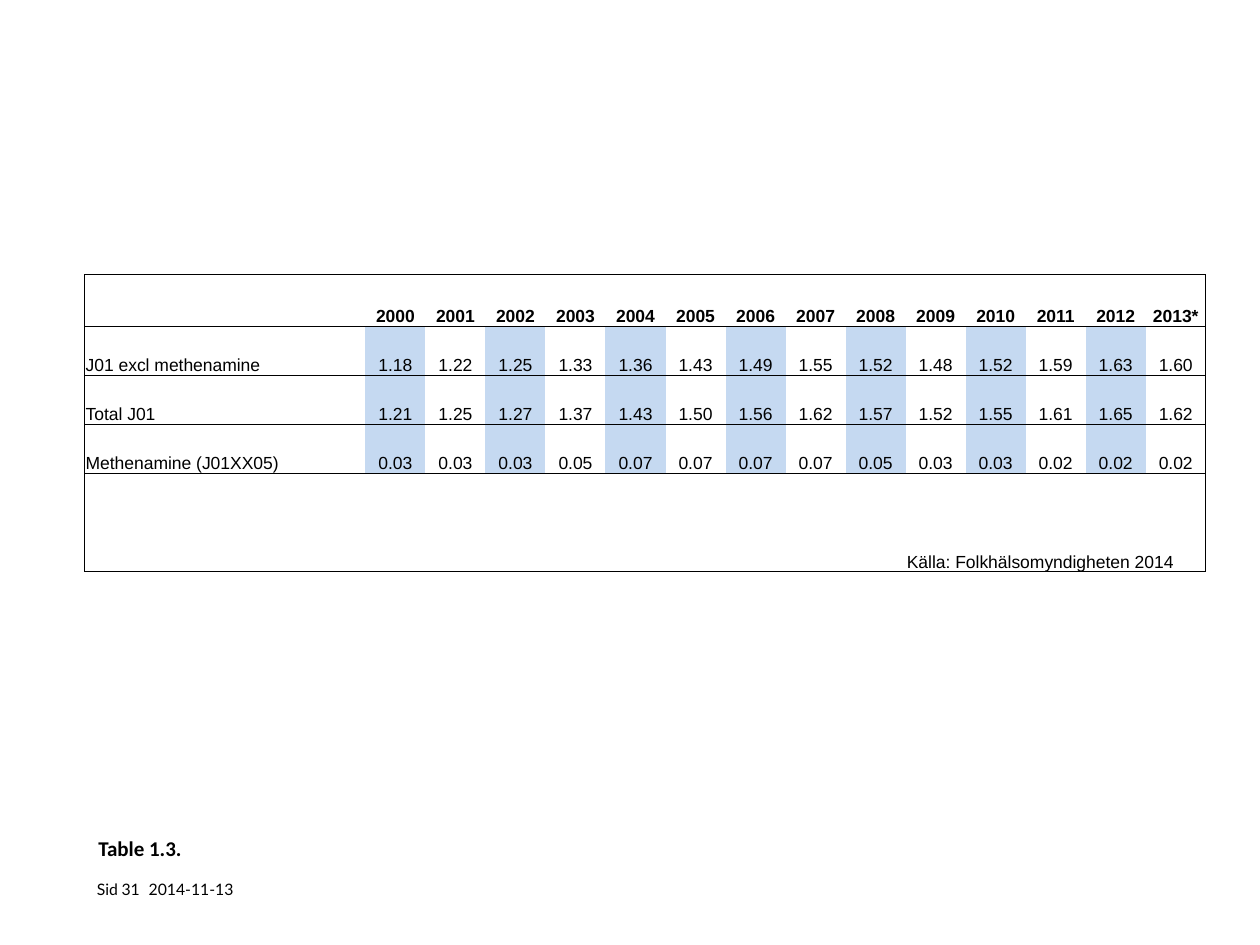
from lxml import etree
from pptx import Presentation
from pptx.dml.color import RGBColor
from pptx.enum import text
from pptx.oxml import ns
from pptx.util import Inches, Pt

INK = {"text": "000000", "line": "000000", "band": "C5D9F1"}
NO_GRID = "{2D5ABB26-0587-4C30-8999-92F81FD0307C}"

YEARS = [str(year) for year in range(2000, 2013)] + ["2013*"]
DATA = {
    "J01 excl methenamine":
        "1.18 1.22 1.25 1.33 1.36 1.43 1.49 1.55 1.52 1.48 1.52 1.59 1.63 1.60",
    "Total J01":
        "1.21 1.25 1.27 1.37 1.43 1.50 1.56 1.62 1.57 1.52 1.55 1.61 1.65 1.62",
    "Methenamine (J01XX05)":
        "0.03 0.03 0.03 0.05 0.07 0.07 0.07 0.07 0.05 0.03 0.03 0.02 0.02 0.02",
}
SOURCE = "Källa: Folkhälsomyndigheten 2014"


def style(para, size, face, bold=False):
    for run in para.runs:
        run.font.size = Pt(size)
        run.font.name = face
        run.font.bold = bold
        run.font.color.rgb = RGBColor.from_string(INK["text"])


def flush(frame):
    frame.margin_left = frame.margin_right = 0
    frame.margin_top = frame.margin_bottom = 0
    frame.vertical_anchor = text.MSO_ANCHOR.BOTTOM


def border(cell, side, width):
    props = cell._tc.get_or_add_tcPr()
    line = etree.SubElement(props, ns.qn("a:ln" + side), w=str(Pt(width)))
    if width:
        fill = etree.SubElement(line, ns.qn("a:solidFill"))
        etree.SubElement(fill, ns.qn("a:srgbClr"), val=INK["line"])
    else:
        etree.SubElement(line, ns.qn("a:noFill"))


def put_title(slide, box):
    title = slide.shapes.title
    title.left, title.top, title.width, title.height = map(Inches, box)
    frame = title.text_frame
    frame.text = "Table 1.3."
    frame.word_wrap = True
    flush(frame)
    para = frame.paragraphs[0]
    para.alignment = text.PP_ALIGN.LEFT
    para.line_spacing = Pt(34)
    style(para, 12, "Calibri", True)


def put_table(slide, box):
    rows = [["", *YEARS]]
    rows += [[name, *row.split()] for name, row in DATA.items()]
    blank = [""] * len(rows[0])
    rows += [blank, blank[:10] + [SOURCE] + blank[11:]]
    last, end = len(rows) - 1, len(blank) - 1

    frame = slide.shapes.add_table(len(rows), len(blank), *map(Inches, box))
    table = frame.table
    table.first_row = table.horz_banding = False
    table._tbl.tblPr.find(ns.qn("a:tableStyleId")).text = NO_GRID

    # Wide label column, then equal year columns
    label = 2.23
    for c, col in enumerate(table.columns):
        col.width = Inches(label if c == 0 else (box[2] - label) / end)
    for r, row in enumerate(table.rows):
        row.height = Inches(0.41 if r == 0 else 0.39)

    # Rules above and below each row; none between the two foot rows
    rules = [0.5, 1] + [0.5] * (last - 2) + [0, 0.5]
    for r, row in enumerate(rows):
        for c, value in enumerate(row):
            cell = table.cell(r, c)
            cell.margin_left = cell.margin_right = cell.margin_top = Inches(0.01)
            cell.margin_bottom = 0
            cell.vertical_anchor = text.MSO_ANCHOR.BOTTOM
            border(cell, "L", 0.5 if c == 0 else 0)
            border(cell, "R", 0.5 if c == end or value == SOURCE else 0)
            border(cell, "T", rules[r])
            border(cell, "B", rules[r + 1])
            if 0 < r <= len(DATA) and c % 2:
                cell.fill.solid()
                cell.fill.fore_color.rgb = RGBColor.from_string(INK["band"])
            else:
                cell.fill.background()
            if value:
                cell.text_frame.text = value
                para = cell.text_frame.paragraphs[0]
                if c and value != SOURCE:
                    para.alignment = text.PP_ALIGN.CENTER
                style(para, 10, "Arial", r == 0)
    table.cell(last, 10).merge(table.cell(last, end))


def put_note(slide, words, box, align=text.PP_ALIGN.LEFT):
    frame = slide.shapes.add_textbox(*map(Inches, box)).text_frame
    frame.text = words
    frame.word_wrap = True
    flush(frame)
    frame.paragraphs[0].alignment = align
    style(frame.paragraphs[0], 9, "Lato")


def put_foot(slide, left, top):
    put_note(slide, "Sid", (left, top, 0.2, 0.2))
    put_note(slide, "31", (left + 0.01, top, 0.33, 0.2), text.PP_ALIGN.RIGHT)
    put_note(slide, "2014-11-13", (left + 0.41, top, 0.86, 0.2))


def main():
    deck = Presentation()
    deck.slide_width, deck.slide_height = Inches(10), Inches(7.5)
    slide = deck.slides.add_slide(deck.slide_layouts[5])
    put_table(slide, (0.67, 2.18, 8.9, 2.36))
    put_title(slide, (0.78, 6.38, 3.2, 0.45))
    put_foot(slide, 0.77, 6.93)
    deck.save("out.pptx")


if __name__ == "__main__":
    main()
